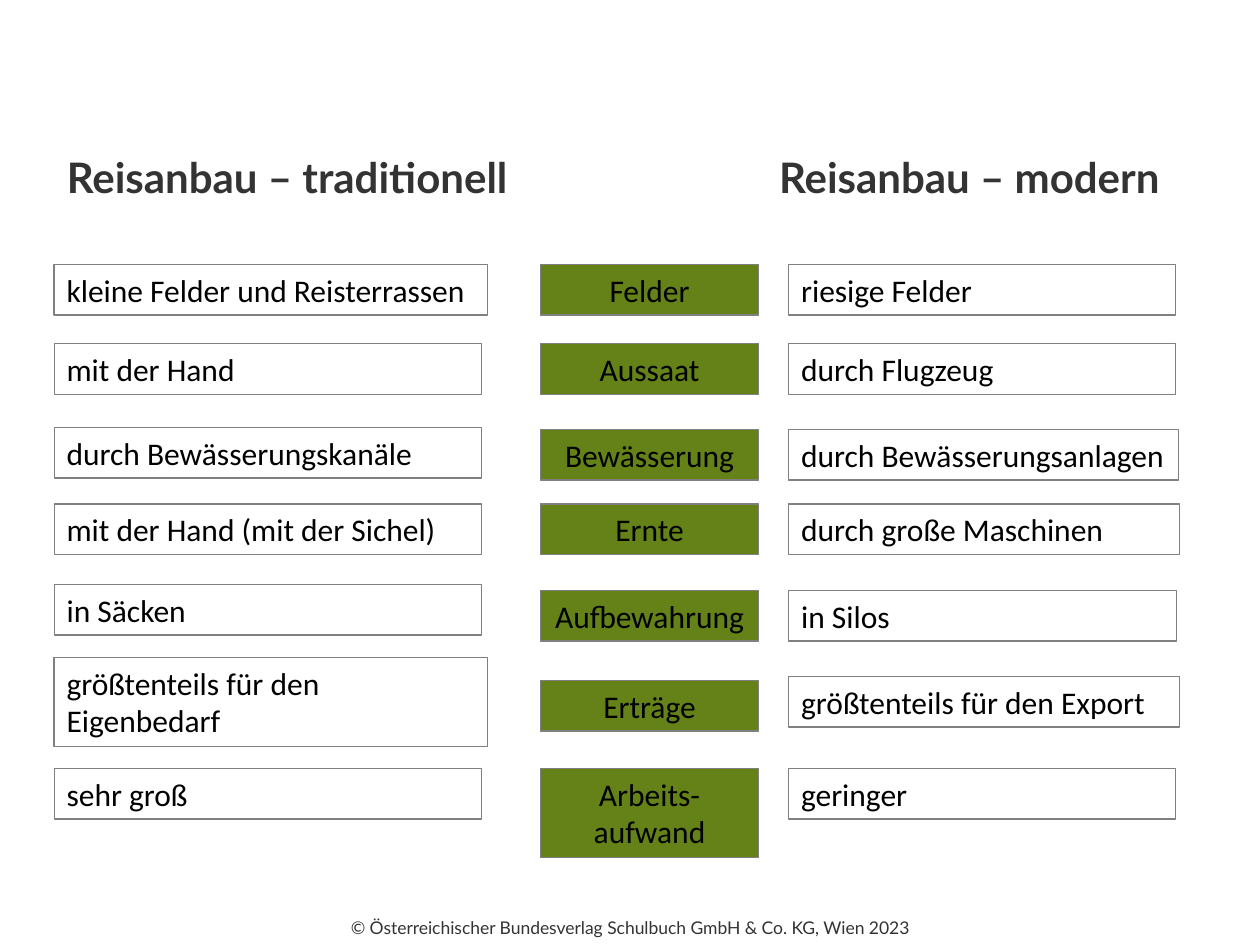
from dataclasses import dataclass

import pptx
import pptx.dml.color
import pptx.enum.shapes
import pptx.enum.text
import pptx.oxml.ns
import pptx.util
from lxml import etree

Pt = pptx.util.Pt
ALIGN = pptx.enum.text.PP_ALIGN
ANCHOR = pptx.enum.text.MSO_ANCHOR
AUTO = pptx.enum.text.MSO_AUTO_SIZE

LEFT_X, TOPIC_X, RIGHT_X = 30.95, 308.9, 450.7
TOPIC_W = 124.6
LINE_H = 28.9
EXTRA_LINE_H = 22.1
GREEN, GREY, DARK, BLACK = "648218", "808080", "333333", "000000"
HEADING = {"name": "Lato", "size": Pt(24), "bold": True}
BODY = {"name": "Calibri", "size": Pt(18), "bold": False}
FOOTER = {"name": "Lato", "size": Pt(10), "bold": False}


@dataclass
class Cell:
    text: str
    top: float
    width: float
    lines: int = 1


@dataclass
class Row:
    traditional: Cell
    topic: Cell
    modern: Cell


ROWS = [
    Row(Cell("kleine Felder und Reisterrassen", 151.2, 247.7),
        Cell("Felder", 151.2, TOPIC_W),
        Cell("riesige Felder", 151.2, 221)),
    Row(Cell("mit der Hand", 196.4, 244.1),
        Cell("Aussaat", 196.4, TOPIC_W),
        Cell("durch Flugzeug", 196.4, 221)),
    Row(Cell("durch Bewässerungskanäle", 244.3, 244.1),
        Cell("Bewässerung", 245.5, TOPIC_W),
        Cell("durch Bewässerungsanlagen", 245.5, 222.8)),
    Row(Cell("mit der Hand (mit der Sichel)", 288, 244.1),
        Cell("Ernte", 288, TOPIC_W),
        Cell("durch große Maschinen", 288, 223.4)),
    Row(Cell("in Säcken", 334, 244.1),
        Cell("Aufbewahrung", 337.5, TOPIC_W),
        Cell("in Silos", 337.5, 221.7)),
    Row(Cell("größtenteils für den Eigenbedarf", 375.7, 247.7, 2),
        Cell("Erträge", 388.9, TOPIC_W),
        Cell("größtenteils für den Export", 386.6, 223.4)),
    Row(Cell("sehr groß", 439.1, 244.1),
        Cell("Arbeits-aufwand", 439.1, TOPIC_W, 2),
        Cell("geringer", 439.1, 221)),
]


def rgb(value: str) -> pptx.dml.color.RGBColor:
    return pptx.dml.color.RGBColor.from_string(value)


def write(tf, text: str, fmt: dict, color: str, align=ALIGN.LEFT):
    p = tf.paragraphs[0]
    p.alignment = align
    r = p.add_run()
    r.text = text
    for key, value in fmt.items():
        setattr(r.font, key, value)
    r.font.color.rgb = rgb(color)
    return p


def add_title(s, text: str, tab: float) -> None:
    sp = s.shapes.title
    for key, value in {"left": 30.95, "top": 82.8, "width": 668.9, "height": 36.7}.items():
        setattr(sp, key, Pt(value))
    tf = sp.text_frame
    for key, value in {"word_wrap": True, "vertical_anchor": ANCHOR.MIDDLE,
                       "auto_size": AUTO.NONE}.items():
        setattr(tf, key, value)
    p = write(tf, text, HEADING, DARK)
    tabs = etree.SubElement(p._p.get_or_add_pPr(), pptx.oxml.ns.qn("a:tabLst"))
    etree.SubElement(tabs, pptx.oxml.ns.qn("a:tab"), pos=str(int(Pt(tab))), algn="l")


def add_cell(s, cell: Cell, left: float, align, fill: str = "") -> None:
    height = LINE_H + (cell.lines - 1) * EXTRA_LINE_H
    sp = s.shapes.add_shape(pptx.enum.shapes.MSO_SHAPE.RECTANGLE,
                            Pt(left), Pt(cell.top), Pt(cell.width), Pt(height))
    sp.shadow.inherit = False
    if fill:
        sp.fill.solid()
        sp.fill.fore_color.rgb = rgb(fill)
    else:
        sp.fill.background()
    sp.line.color.rgb = rgb(GREY)
    sp.line.width = Pt(0.75)
    tf = sp.text_frame
    for key, value in {"word_wrap": True, "vertical_anchor": ANCHOR.TOP,
                       "auto_size": AUTO.SHAPE_TO_FIT_TEXT}.items():
        setattr(tf, key, value)
    write(tf, cell.text, BODY, BLACK, align)


def add_footer(s, text: str) -> None:
    tf = s.shapes.add_textbox(Pt(0), Pt(513.4), Pt(720), Pt(28.8)).text_frame
    tf.word_wrap = True
    tf.margin_top = Pt(10.8)
    write(tf, text, FOOTER, DARK, ALIGN.CENTER)


def main() -> None:
    prs = pptx.Presentation()
    prs.slide_width, prs.slide_height = Pt(720), Pt(540)
    s = prs.slides.add_slide(prs.slide_layouts[5])
    add_title(s, "Reisanbau – traditionell\tReisanbau – modern", 407)
    for row in ROWS:
        add_cell(s, row.traditional, LEFT_X, ALIGN.LEFT)
        add_cell(s, row.topic, TOPIC_X, ALIGN.CENTER, GREEN)
        add_cell(s, row.modern, RIGHT_X, ALIGN.LEFT)
    add_footer(s, "© Österreichischer Bundesverlag Schulbuch GmbH & Co. KG, Wien 2023")
    prs.save("out.pptx")


if __name__ == "__main__":
    main()
